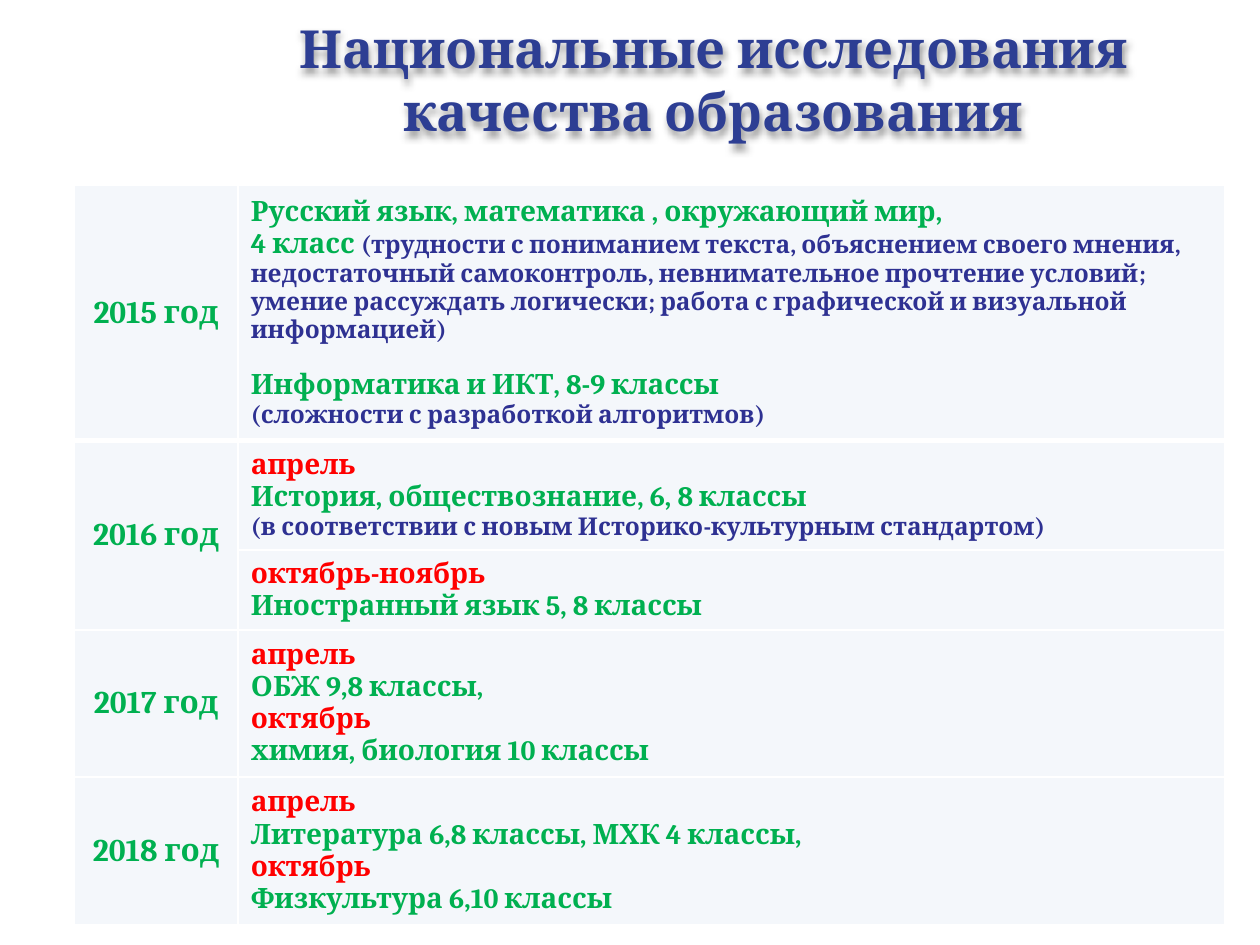
import pptx
import pptx.util
import pptx.dml.color
import pptx.enum.text
import pptx.oxml
import pptx.oxml.ns
from lxml import etree

GREEN, BLUE, RED, WHITE = "00B050", "2E3192", "FF0000", "FFFFFF"
PALE, NAVY = "DCE6F2", "2D3E93"
NS = pptx.oxml.ns.nsdecls("a")
LEFT = pptx.enum.text.PP_ALIGN.LEFT
MID = pptx.enum.text.PP_ALIGN.CENTER


def hue(code):
    return pptx.dml.color.RGBColor.from_string(code)


def put(frame, text, size=16, tint=GREEN, align=LEFT, gap=0, join=False):
    para = frame.paragraphs[-1]
    if para.runs and not join:
        para = frame.add_paragraph()
    if not join:
        para.alignment = align
    if gap:
        para.space_before = pptx.util.Pt(gap)
    for num, line in enumerate(text.split("\n")):
        if num:
            para.add_line_break()
        if line:
            run = para.add_run()
            run.text = line
            run.font.name = "Cambria"
            run.font.size = pptx.util.Pt(size)
            run.font.bold = True
            run.font.color.rgb = hue(tint)


deck = pptx.Presentation()
wide = deck.slide_width = pptx.util.Inches(10)
high = deck.slide_height = pptx.util.Inches(7.5)
slide = deck.slides.add_slide(deck.slide_layouts[6])

title = slide.shapes.add_textbox(
    int(wide * 0.153), int(high * 0.01), int(wide * 0.836), int(high * 0.148))
title.text_frame.word_wrap = True
put(title.text_frame, "Национальные исследования \nкачества образования ",
    size=30, tint=NAVY, align=MID)
title.fill.background()
title._element.spPr.append(pptx.oxml.parse_xml(
    f'<a:effectLst {NS}><a:outerShdw blurRad="50800" dist="38100" dir="5400000" '
    'algn="t" rotWithShape="0"><a:srgbClr val="000000"><a:alpha val="40000"/>'
    '</a:srgbClr></a:outerShdw></a:effectLst>'))

cols = [0.13, 0.783]
rows = [0.26, 0.112, 0.084, 0.156, 0.156]
years = {0: "2015 год", 1: "2016 год", 3: "2017 год", 4: "2018 год"}
small = dict(size=14, tint=BLUE)
month = dict(tint=RED)
facts = [
    [("Русский язык, математика , окружающий мир, \n4 класс ", {}),
     ("(трудности с пониманием текста, объяснением своего мнения, "
      "недостаточный самоконтроль, невнимательное прочтение условий; "
      "умение рассуждать логически; работа с графической и визуальной "
      "информацией)", dict(small, join=True)),
     ("Информатика и ИКТ, 8-9 классы", dict(gap=14)),
     ("(сложности с разработкой алгоритмов)", small)],
    [("апрель", month),
     ("История, обществознание, 6, 8 классы \n", {}),
     ("(в соответствии с новым Историко-культурным стандартом)",
      dict(small, join=True))],
    [("октябрь-ноябрь", month),
     ("Иностранный язык 5, 8 классы", {})],
    [("апрель", month), ("ОБЖ 9,8 классы,", {}),
     ("октябрь", month), ("химия, биология 10 классы", {})],
    [("апрель", month), ("Литература 6,8 классы, МХК 4 классы,", {}),
     ("октябрь", month), ("Физкультура 6,10 классы", {})],
]

table = slide.shapes.add_table(
    len(rows), len(cols), int(wide * 0.059), int(high * 0.196),
    int(wide * sum(cols)), int(high * sum(rows))).table
table.first_row = table.horz_banding = False
for num, share in enumerate(cols):
    table.columns[num].width = int(wide * share)
for num, share in enumerate(rows):
    table.rows[num].height = int(high * share)
table.cell(1, 0).merge(table.cell(2, 0))

for row in range(len(rows)):
    for col in range(len(cols)):
        cell = table.cell(row, col)
        cell.vertical_anchor = pptx.enum.text.MSO_ANCHOR.MIDDLE
        props = cell._tc.get_or_add_tcPr()
        for side in "LRTB":
            thick = 3 if (row, side) in [(0, "B"), (1, "T")] else 1
            props.append(pptx.oxml.parse_xml(
                f'<a:ln{side} {NS} w="{pptx.util.Pt(thick)}"><a:solidFill>'
                f'<a:srgbClr val="{WHITE}"/></a:solidFill></a:ln{side}>'))
        cell.fill.solid()
        cell.fill.fore_color.rgb = hue(PALE)
        tone = props.find(pptx.oxml.ns.qn("a:solidFill"))[0]
        etree.SubElement(tone, pptx.oxml.ns.qn("a:alpha"), val="29000")
    if row in years:
        put(table.cell(row, 0).text_frame, years[row], size=18, align=MID)
    for text, form in facts[row]:
        put(table.cell(row, 1).text_frame, text, **form)

deck.save("out.pptx")
